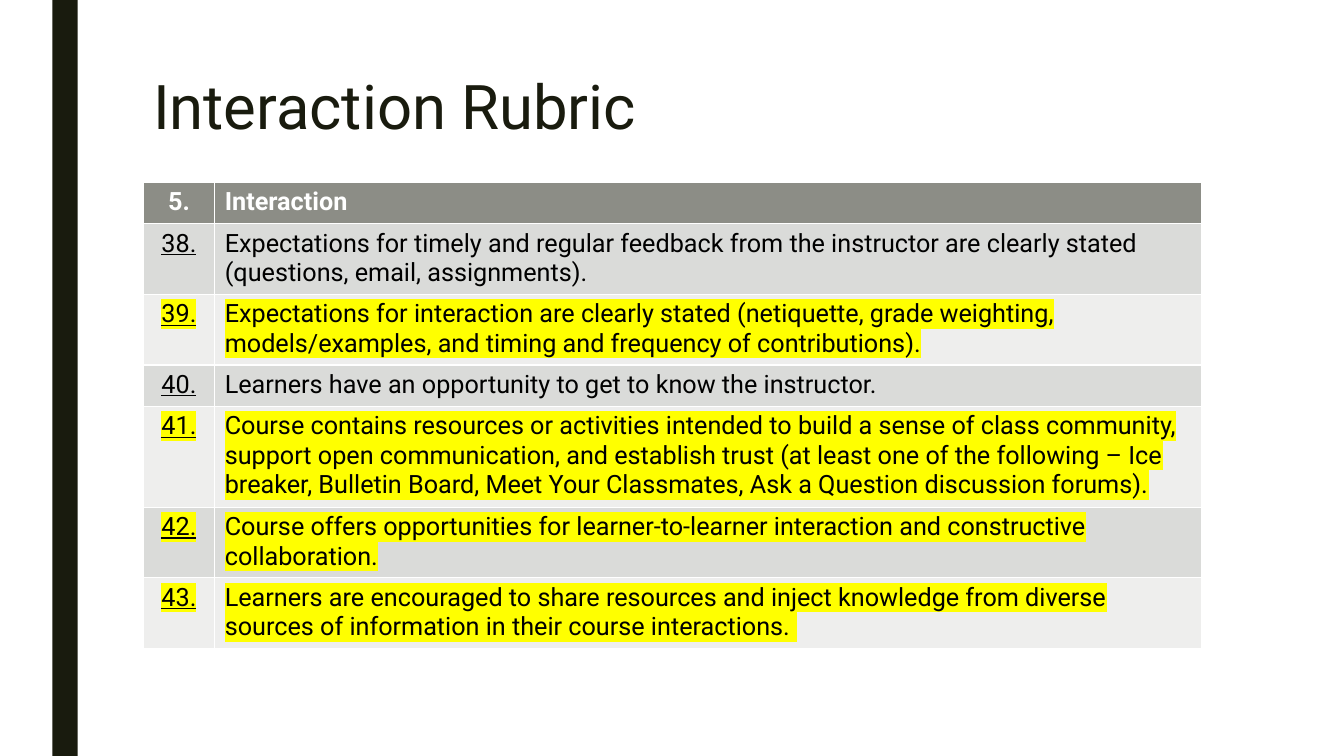
"""Build the Interaction Rubric slide."""
import lxml.etree
import pptx
import pptx.dml.color
import pptx.enum.shapes
import pptx.enum.text
import pptx.oxml.ns
import pptx.util

Inches = pptx.util.Inches

TITLE = "Interaction Rubric"
HEADER = ("5.", "Interaction")
CRITERIA = [
    ("38.", "Expectations for timely and regular feedback from the instructor are clearly stated "
            "(questions, email, assignments).", False),
    ("39.", "Expectations for interaction are clearly stated (netiquette, grade weighting, "
            "models/examples, and timing and frequency of contributions).", True),
    ("40.", "Learners have an opportunity to get to know the instructor.", False),
    ("41.", "Course contains resources or activities intended to build a sense of class community, "
            "support open communication, and establish trust (at least one of the following – Ice "
            "breaker, Bulletin Board, Meet Your Classmates, Ask a Question discussion forums).", True),
    ("42.", "Course offers opportunities for learner-to-learner interaction and constructive "
            "collaboration.", True),
    ("43.", "Learners are encouraged to share resources and inject knowledge from diverse "
            "sources of information in their course interactions. ", True),
]
THEME = {
    "font": "Roboto", "title_size": 44, "table_size": 18,
    "ink": "191B0E", "text": "000000", "header_text": "FFFFFF",
    "header_fill": "8C8D86", "bands": ("DADBD9", "EEEEED"), "highlight": "FFFF00",
}
LEFT, WIDTH = 1.42, 10.5
TABLE_TOP, ROW_HEIGHT, NUMBER_WIDTH = 1.81, 0.41, 0.71


def color(name):
    return pptx.dml.color.RGBColor.from_string(name)


def style(paragraph, size, ink, bold=False, underline=False):
    font = paragraph.font
    font.name, font.size = THEME["font"], pptx.util.Pt(size)
    font.color.rgb = color(ink)
    font.bold, font.underline = bold, underline


def highlight(span):
    qn = pptx.oxml.ns.qn
    mark = lxml.etree.SubElement(span.font._element, qn("a:highlight"))
    lxml.etree.SubElement(mark, qn("a:srgbClr"), val=THEME["highlight"])


def add_bar(page, deck):
    bar = page.shapes.add_shape(pptx.enum.shapes.MSO_SHAPE.RECTANGLE,
                                Inches(0.52), 0, Inches(0.25), deck.slide_height)
    bar.shadow.inherit = False
    bar.fill.solid()
    bar.fill.fore_color.rgb = color(THEME["ink"])
    bar.line.fill.background()


def add_title(page):
    box = page.shapes.add_textbox(Inches(LEFT), Inches(0.71), Inches(WIDTH), Inches(1.62))
    box.text_frame.word_wrap = True
    para = box.text_frame.paragraphs[0]
    para.line_spacing = 0.89
    para.add_run().text = TITLE
    style(para, THEME["title_size"], THEME["ink"])


def add_rubric(page):
    rows = [(*HEADER, False), *CRITERIA]
    table = page.shapes.add_table(len(rows), 2, Inches(LEFT), Inches(TABLE_TOP),
                                  Inches(WIDTH), Inches(ROW_HEIGHT * len(rows))).table
    table.columns[0].width = Inches(NUMBER_WIDTH)
    table.columns[1].width = Inches(WIDTH - NUMBER_WIDTH)
    for row, (number, wording, marked) in enumerate(rows):
        header = row == 0
        fill = THEME["header_fill"] if header else THEME["bands"][(row - 1) % 2]
        ink = THEME["header_text"] if header else THEME["text"]
        for column, text in enumerate((number, wording)):
            cell = table.cell(row, column)
            cell.fill.solid()
            cell.fill.fore_color.rgb = color(fill)
            para = cell.text_frame.paragraphs[0]
            span = para.add_run()
            span.text = text
            is_number = column == 0
            style(para, THEME["table_size"], ink, header, is_number and not header)
            if is_number:
                para.alignment = pptx.enum.text.PP_ALIGN.CENTER
            if marked:
                highlight(span)


def main():
    deck = pptx.Presentation()
    deck.slide_width, deck.slide_height = Inches(13.33), Inches(7.5)
    page = deck.slides.add_slide(deck.slide_layouts[6])
    add_bar(page, deck)
    add_title(page)
    add_rubric(page)
    deck.save("out.pptx")


if __name__ == "__main__":
    main()
